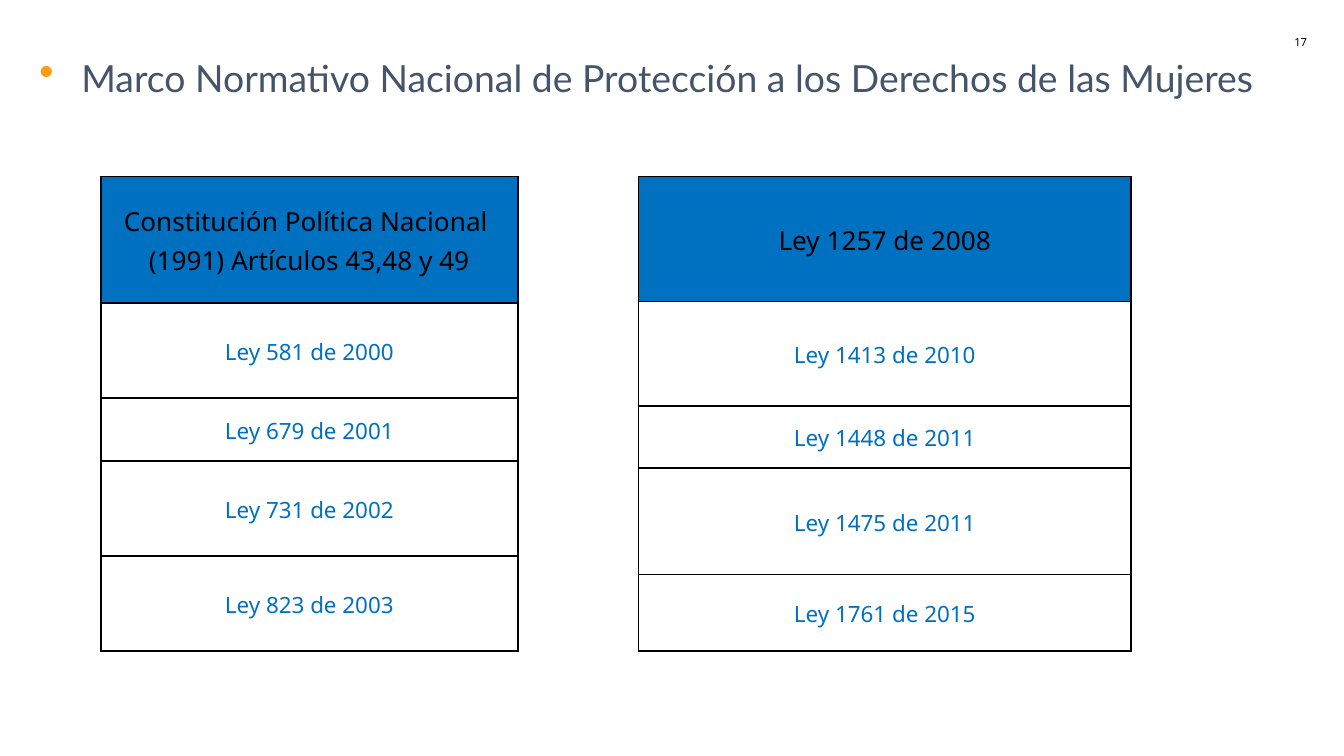
from dataclasses import dataclass

from lxml.etree import SubElement
from pptx import Presentation
from pptx.dml.color import RGBColor as Rgb
from pptx.enum.shapes import MSO_SHAPE as Preset
from pptx.enum.text import MSO_ANCHOR as Anchor, PP_ALIGN as Align
from pptx.oxml.ns import qn
from pptx.slide import Slide
from pptx.table import _Cell as Cell
from pptx.text.text import TextFrame
from pptx.util import Pt


@dataclass(frozen=True)
class Theme:
    blue: str = "0070C0"
    black: str = "000000"
    slate: str = "44546A"
    orange: str = "FC9E14"
    title_font: str = "Lato"
    body_font: str = "Noto Sans"
    title_size: float = 20
    heading_size: float = 14
    law_size: float = 12
    number_size: float = 6
    border: float = 1


@dataclass(frozen=True)
class Box:
    left: float
    top: float
    width: float
    height: float

    def lengths(self) -> tuple[Pt, Pt, Pt, Pt]:
        return Pt(self.left), Pt(self.top), Pt(self.width), Pt(self.height)


@dataclass(frozen=True)
class LawTable:
    left: float
    width: float
    row_heights: tuple[float, ...]
    heading: str
    laws: tuple[str, ...]


THEME = Theme()
TABLE_TOP = 94.5
LAW_TABLES = (
    LawTable(
        54, 223.4, (67.7, 50.9, 33.8, 50.9, 50.9),
        "Constitución Política Nacional \n(1991) Artículos 43,48 y 49",
        ("Ley 581 de 2000", "Ley 679 de 2001", "Ley 731 de 2002", "Ley 823 de 2003"),
    ),
    LawTable(
        342, 264, (67, 56.1, 33.1, 57.2, 40.8),
        "Ley 1257 de 2008",
        ("Ley 1413 de 2010", "Ley 1448 de 2011", "Ley 1475 de 2011", "Ley 1761 de 2015"),
    ),
)


def write(frame: TextFrame, words: str, font: str, size: float, color: str, spacing: float) -> None:
    frame.text = words
    for paragraph in frame.paragraphs:
        paragraph.alignment = Align.CENTER
        paragraph.line_spacing = spacing
        for run in paragraph.runs:
            run.font.name = font
            run.font.size = Pt(size)
            run.font.color.rgb = Rgb.from_string(color)


def add_label(slide: Slide, box: Box, words: str, font: str, size: float, color: str,
              spacing: float, anchor: Anchor) -> None:
    frame = slide.shapes.add_textbox(*box.lengths()).text_frame
    frame.word_wrap = True
    frame.vertical_anchor = anchor
    write(frame, words, font, size, color, spacing)


def outline(cell: Cell) -> None:
    properties = cell._tc.get_or_add_tcPr()
    for side in ("a:lnL", "a:lnR", "a:lnT", "a:lnB"):
        edge = SubElement(properties, qn(side), w=str(Pt(THEME.border)))
        fill = SubElement(edge, qn("a:solidFill"))
        SubElement(fill, qn("a:srgbClr"), val=THEME.black)


def add_law_table(slide: Slide, spec_table: LawTable) -> None:
    box = Box(spec_table.left, TABLE_TOP, spec_table.width, sum(spec_table.row_heights))
    entries = (spec_table.heading, *spec_table.laws)
    grid = slide.shapes.add_table(len(entries), 1, *box.lengths()).table
    grid.first_row = grid.horz_banding = False
    for index, (entry, height) in enumerate(zip(entries, spec_table.row_heights)):
        grid.rows[index].height = Pt(height)
        cell = grid.cell(index, 0)
        cell.margin_left = cell.margin_right = Pt(4.5)
        cell.margin_top = cell.margin_bottom = Pt(0)
        cell.vertical_anchor = Anchor.MIDDLE
        outline(cell)
        if index == 0:
            cell.fill.solid()
            cell.fill.fore_color.rgb = Rgb.from_string(THEME.blue)
            size, color = THEME.heading_size, THEME.black
        else:
            cell.fill.background()
            size, color = THEME.law_size, THEME.blue
        write(cell.text_frame, entry, THEME.body_font, size, color, 1.07)


def add_bullet(slide: Slide, box: Box) -> None:
    bullet = slide.shapes.add_shape(Preset.OVAL, *box.lengths())
    bullet.shadow.inherit = False
    bullet.fill.solid()
    bullet.fill.fore_color.rgb = Rgb.from_string(THEME.orange)
    bullet.line.fill.background()


def main() -> None:
    deck = Presentation()
    deck.slide_width, deck.slide_height = Pt(720), Pt(405)
    slide = deck.slides.add_slide(deck.slide_layouts[6])
    add_label(slide, Box(686, 11.5, 21.6, 21.6), "17", THEME.body_font,
              THEME.number_size, THEME.black, 1.0, Anchor.MIDDLE)
    for law_table in LAW_TABLES:
        add_law_table(slide, law_table)
    add_label(slide, Box(17.2, 28.8, 686, 57),
              "Marco Normativo Nacional de Protección a los Derechos de las Mujeres ",
              THEME.title_font, THEME.title_size, THEME.slate, 0.9, Anchor.TOP)
    add_bullet(slide, Box(21.8, 35.3, 6, 6))
    deck.save("out.pptx")


if __name__ == "__main__":
    main()
